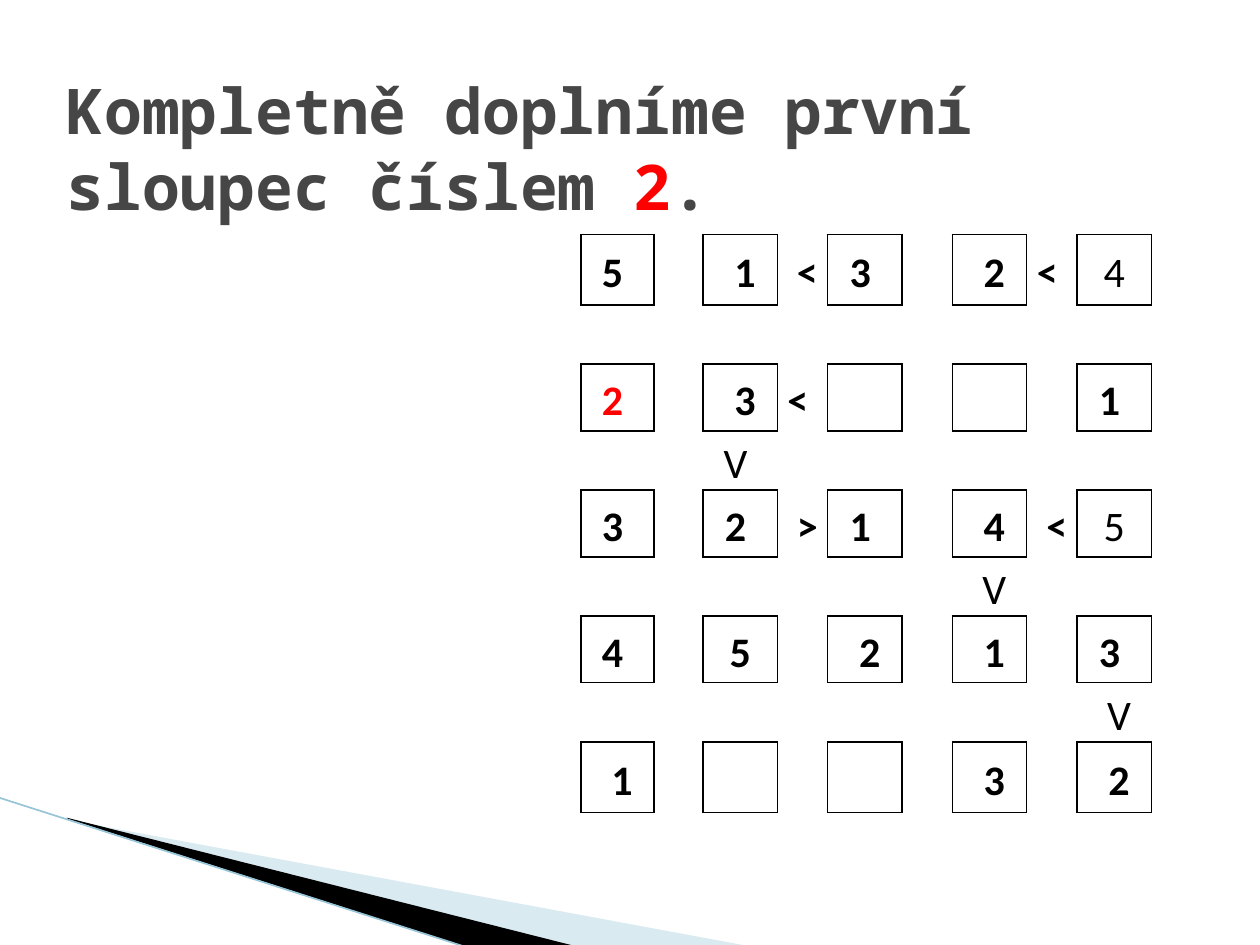
from dataclasses import dataclass

import lxml.etree
import pptx
import pptx.dml.color
import pptx.enum.shapes
import pptx.enum.text
import pptx.oxml.ns
import pptx.util
from pptx.util import Inches

COLOURS = {
    "ink": "000000",
    "title": "464646",
    "highlight": "FF0000",
    "pale": "A0CBDC",
    "edge": "97C5D8",
}
COLUMN_WIDTHS = [0.58, 0.39] + [0.59, 0.4] * 3 + [0.59]
ROW_HEIGHTS = [0.56] + [0.47, 0.53] * 3 + [0.47, 0.56]
PUZZLE = [
    ["5 ", "", " 1", " <", "3 ", "", " 2", "< ", "4"],
    [""] * 9,
    ["2 ", "", " 3", "< ", "", "", "", "", "1 "],
    ["", "", "V ", "", "", "", "", "", ""],
    ["3 ", "", "2 ", " >", "1 ", "", " 4", " <", "5"],
    ["", "", "", "", "", "", " V", "", ""],
    ["4 ", "", "5", "", " 2", "", " 1", "", "3 "],
    ["", "", "", "", "", "", "", "", " V"],
    [" 1", "", "", "", "", "", " 3", "", " 2"],
]
NEW_NUMBERS = {(2, 0)}
LIGHT_NUMBERS = {(0, 8), (4, 8)}


@dataclass
class Wedge:
    points: list[tuple[float, float]]
    colour: str
    opacity: int = 100


WEDGES = [
    Wedge([(0.55, 6.51), (5.95, 7.51), (4.56, 7.51), (0.55, 6.5)], "pale", 40),
    Wedge([(0.53, 6.49), (4.57, 7.51), (3.72, 7.52), (0.54, 6.5)], "ink"),
]


def rgb(name: str) -> pptx.dml.color.RGBColor:
    """Return a named colour."""
    return pptx.dml.color.RGBColor.from_string(COLOURS[name])


def add_child(parent, tag: str, **attributes: str):
    """Append a namespaced XML element."""
    return lxml.etree.SubElement(parent, pptx.oxml.ns.qn(tag), attributes)


def style_run(run, font: str, size: float, colour: str, bold: bool) -> None:
    """Format one run of text."""
    run.font.name = font
    run.font.size = pptx.util.Pt(size)
    run.font.bold = bold
    run.font.color.rgb = rgb(colour)


def draw_wedge(slide, wedge: Wedge) -> None:
    """Draw one filled sliver of the corner decoration."""
    corners = [(Inches(x), Inches(y)) for x, y in wedge.points]
    builder = slide.shapes.build_freeform(*corners[0])
    builder.add_line_segments(corners[1:], close=True)
    sliver = builder.convert_to_shape()
    sliver.shadow.inherit = False
    sliver.line.fill.background()
    sliver.fill.solid()
    sliver.fill.fore_color.rgb = rgb(wedge.colour)
    if wedge.opacity < 100:
        colour = sliver._element.spPr.find(".//" + pptx.oxml.ns.qn("a:srgbClr"))
        add_child(colour, "a:alpha", val=str(wedge.opacity * 1000))


def draw_edge(slide) -> None:
    """Draw the thin line along the corner decoration."""
    edge = slide.shapes.add_connector(
        pptx.enum.shapes.MSO_CONNECTOR.STRAIGHT,
        Inches(-0.01), Inches(6.33), Inches(3.71), Inches(7.52),
    )
    edge.line.color.rgb = rgb("edge")
    edge.line.width = pptx.util.Pt(0.95)
    add_child(edge._element.spPr, "a:effectLst")


def draw_title(slide) -> None:
    """Write the heading with its highlighted number."""
    heading = slide.shapes.add_textbox(
        Inches(0.43), Inches(0.21), Inches(9.3), Inches(2.52)
    ).text_frame
    heading.word_wrap = True
    heading.vertical_anchor = pptx.enum.text.MSO_ANCHOR.MIDDLE
    heading.margin_bottom = Inches(0.65)
    parts = [
        ("Kompletně doplníme první sloupec číslem ", "title"),
        ("2", "highlight"),
        (".", "title"),
    ]
    for text, colour in parts:
        run = heading.paragraphs[0].add_run()
        run.text = text
        style_run(run, "Noto Sans Mono", 36, colour, True)


def draw_borders(cell, sides: dict[str, bool]) -> None:
    """Draw or clear each side of a cell."""
    properties = cell._tc.get_or_add_tcPr()
    for side, visible in sides.items():
        border = add_child(properties, f"a:ln{side}", w=str(pptx.util.Pt(1)))
        if visible:
            fill = add_child(border, "a:solidFill")
            add_child(fill, "a:srgbClr", val=COLOURS["ink"])
        else:
            add_child(border, "a:noFill")


def fill_cell(cell, row: int, column: int) -> None:
    """Write and format one cell of the puzzle."""
    beside, above = row % 2 == 0, column % 2 == 0
    draw_borders(cell, {"L": beside, "R": beside, "T": above, "B": above})
    cell.fill.background()
    cell.vertical_anchor = pptx.enum.text.MSO_ANCHOR.MIDDLE
    cell.margin_left = cell.margin_right = Inches(0.07)
    cell.margin_top = cell.margin_bottom = 0
    text = PUZZLE[row][column]
    if not text:
        return
    paragraph = cell.text_frame.paragraphs[0]
    paragraph.text = text.replace(" ", chr(160))
    paragraph.alignment = pptx.enum.text.PP_ALIGN.CENTER
    paragraph.line_spacing = 1.15
    colour = "highlight" if (row, column) in NEW_NUMBERS else "ink"
    bold = "V" not in text and (row, column) not in LIGHT_NUMBERS
    style_run(paragraph.runs[0], "Calibri", 24, colour, bold)


def draw_puzzle(slide) -> None:
    """Draw the grid of numbers and comparison signs."""
    puzzle = slide.shapes.add_table(
        len(ROW_HEIGHTS), len(COLUMN_WIDTHS), Inches(4.61), Inches(1.86),
        Inches(sum(COLUMN_WIDTHS)), Inches(sum(ROW_HEIGHTS)),
    ).table
    puzzle.first_row = False
    puzzle.horz_banding = False
    for column, width in zip(puzzle.columns, COLUMN_WIDTHS):
        column.width = Inches(width)
    for row, height in zip(puzzle.rows, ROW_HEIGHTS):
        row.height = Inches(height)
    for row in range(len(ROW_HEIGHTS)):
        for column in range(len(COLUMN_WIDTHS)):
            fill_cell(puzzle.cell(row, column), row, column)


def main() -> None:
    """Build and save the slide."""
    presentation = pptx.Presentation()
    presentation.slide_width = Inches(10)
    presentation.slide_height = Inches(7.5)
    slide = presentation.slides.add_slide(presentation.slide_layouts[6])
    for wedge in WEDGES:
        draw_wedge(slide, wedge)
    draw_edge(slide)
    draw_title(slide)
    draw_puzzle(slide)
    presentation.save("out.pptx")


if __name__ == "__main__":
    main()
